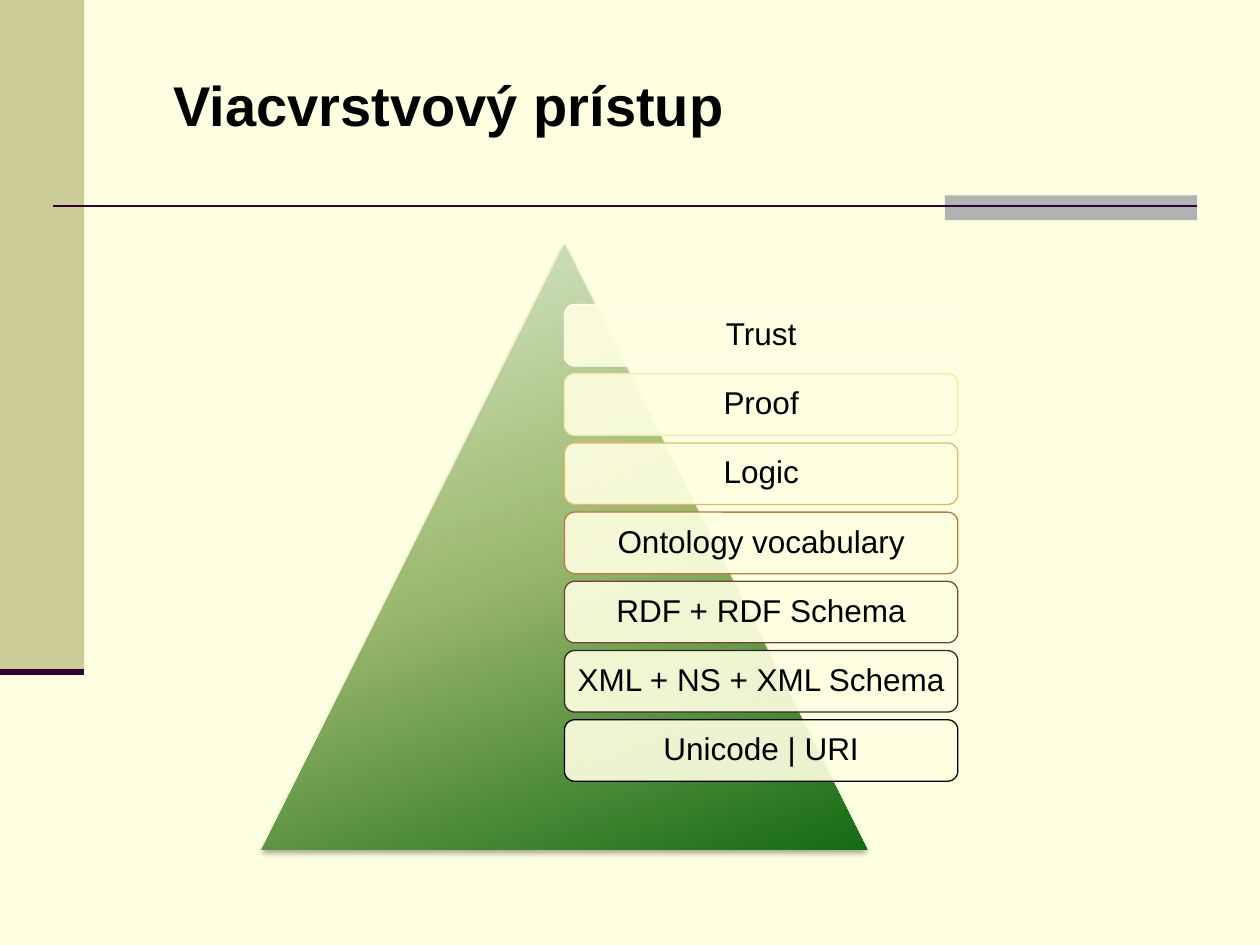
from dataclasses import dataclass

from lxml import etree
from pptx import Presentation
from pptx.dml.color import RGBColor
from pptx.enum.shapes import MSO_CONNECTOR, MSO_SHAPE
from pptx.enum.text import MSO_ANCHOR, MSO_AUTO_SIZE, PP_ALIGN
from pptx.oxml.ns import qn
from pptx.util import Cm, Pt

RECT = MSO_SHAPE.RECTANGLE
ROUND = MSO_SHAPE.ROUNDED_RECTANGLE
PEAK = MSO_SHAPE.ISOSCELES_TRIANGLE
LINE = MSO_CONNECTOR.STRAIGHT
MIDDLE = MSO_ANCHOR.MIDDLE
CENTER = PP_ALIGN.CENTER
FIT = MSO_AUTO_SIZE.SHAPE_TO_FIT_TEXT

CREAM, BLACK, PLUM = "FFFFE1", "000000", "330033"
FONT = "Arial"
TOP, STEP = 6.14, 1.395


@dataclass(frozen=True)
class Box:
    left: float
    top: float
    width: float
    height: float

    def size(self) -> tuple:
        return Cm(self.left), Cm(self.top), Cm(self.width), Cm(self.height)


@dataclass(frozen=True)
class Rule:
    left: float
    right: float
    top: float
    weight: float


@dataclass(frozen=True)
class Layer:
    text: str
    edge: str


BANDS = [(Box(0, 0, 1.7, 13.54), "CCCC99"), (Box(19.05, 3.94, 5.08, 0.5), "B2B2B2")]
RULES = [Rule(1.06, 24.13, 4.15, 1.5), Rule(0, 1.7, 13.54, 3.5)]
STOPS = [(0, "DDEBCF"), (50, "9CB86E"), (100, "156B13")]
LAYERS = [
    Layer("Trust", "FFFFEE"),
    Layer("Proof", "F7E9A4"),
    Layer("Logic", "E1B868"),
    Layer("Ontology vocabulary", "B97B3E"),
    Layer("RDF + RDF Schema", "6E4937"),
    Layer("XML + NS + XML Schema", "302522"),
    Layer("Unicode | URI", BLACK),
]


def color(code: str) -> RGBColor:
    return RGBColor.from_string(code)


def node(root, tag: str, **attrs):
    return etree.SubElement(root, qn(tag), {k: str(v) for k, v in attrs.items()})


def tint(root, code: str, alpha: int) -> None:
    node(node(root, "a:srgbClr", val=code), "a:alpha", val=alpha * 1000)


def add_shape(slide, kind, box: Box, fill: str):
    shape = slide.shapes.add_shape(kind, *box.size())
    shape.shadow.inherit = False
    shape.fill.solid()
    shape.fill.fore_color.rgb = color(fill)
    shape.line.fill.background()
    return shape


def add_rule(slide, rule: Rule) -> None:
    line = slide.shapes.add_connector(
        LINE, Cm(rule.left), Cm(rule.top), Cm(rule.right), Cm(rule.top))
    line.line.color.rgb = color(PLUM)
    line.line.width = Pt(rule.weight)
    node(line._element.spPr, "a:effectLst")


def set_text(frame, text: str, size: int, bold: bool = False):
    frame.text = text
    par = frame.paragraphs[0]
    font = par.font
    font.name, font.size, font.bold = FONT, Pt(size), bold
    font.color.rgb = color(BLACK)
    return par


def add_title(slide, box: Box, text: str) -> None:
    frame = slide.shapes.add_textbox(*box.size()).text_frame
    frame.word_wrap = False
    frame.auto_size = FIT
    set_text(frame, text, 32, True)


def add_peak(slide, box: Box) -> None:
    shape = add_shape(slide, PEAK, box, CREAM)
    shape.fill.gradient()
    shape.fill.gradient_angle = 290
    props = shape._element.spPr
    stops = props.find(".//" + qn("a:gsLst"))
    for stop in list(stops):
        stops.remove(stop)
    for place, code in STOPS:
        tint(node(stops, "a:gs", pos=place * 1000), code, 100)
    shade = node(props.find(qn("a:effectLst")), "a:outerShdw", blurRad=Pt(3.1),
                 dist=Pt(1.8), dir=90 * 60000, rotWithShape=0)
    tint(shade, BLACK, 35)


def add_layer(slide, box: Box, layer: Layer) -> None:
    shape = add_shape(slide, ROUND, box, CREAM)
    fill = shape._element.spPr.find(qn("a:solidFill"))
    node(fill[0], "a:alpha", val=90000)
    shape.line.color.rgb = color(layer.edge)
    shape.line.width = Pt(0.75)
    frame = shape.text_frame
    frame.word_wrap = True
    frame.vertical_anchor = MIDDLE
    frame.margin_left = frame.margin_right = Cm(0.15)
    frame.margin_top = frame.margin_bottom = Cm(0.18)
    par = set_text(frame, layer.text, 18)
    par.alignment = CENTER
    par.line_spacing = 0.9


def main() -> None:
    deck = Presentation()
    deck.slide_width, deck.slide_height = Cm(25.4), Cm(19.05)
    slide = deck.slides.add_slide(deck.slide_layouts[6])
    slide.background.fill.solid()
    slide.background.fill.fore_color.rgb = color(CREAM)
    for box, fill in BANDS:
        add_shape(slide, RECT, box, fill)
    for rule in RULES:
        add_rule(slide, rule)
    add_title(slide, Box(3.25, 1.3, 11.61, 1.6), "Viacvrstvový prístup")
    add_peak(slide, Box(5.28, 4.93, 12.2, 12.2))
    for i, layer in enumerate(LAYERS):
        add_layer(slide, Box(11.38, TOP + i * STEP, 7.93, 1.24), layer)
    deck.save("out.pptx")


if __name__ == "__main__":
    main()
